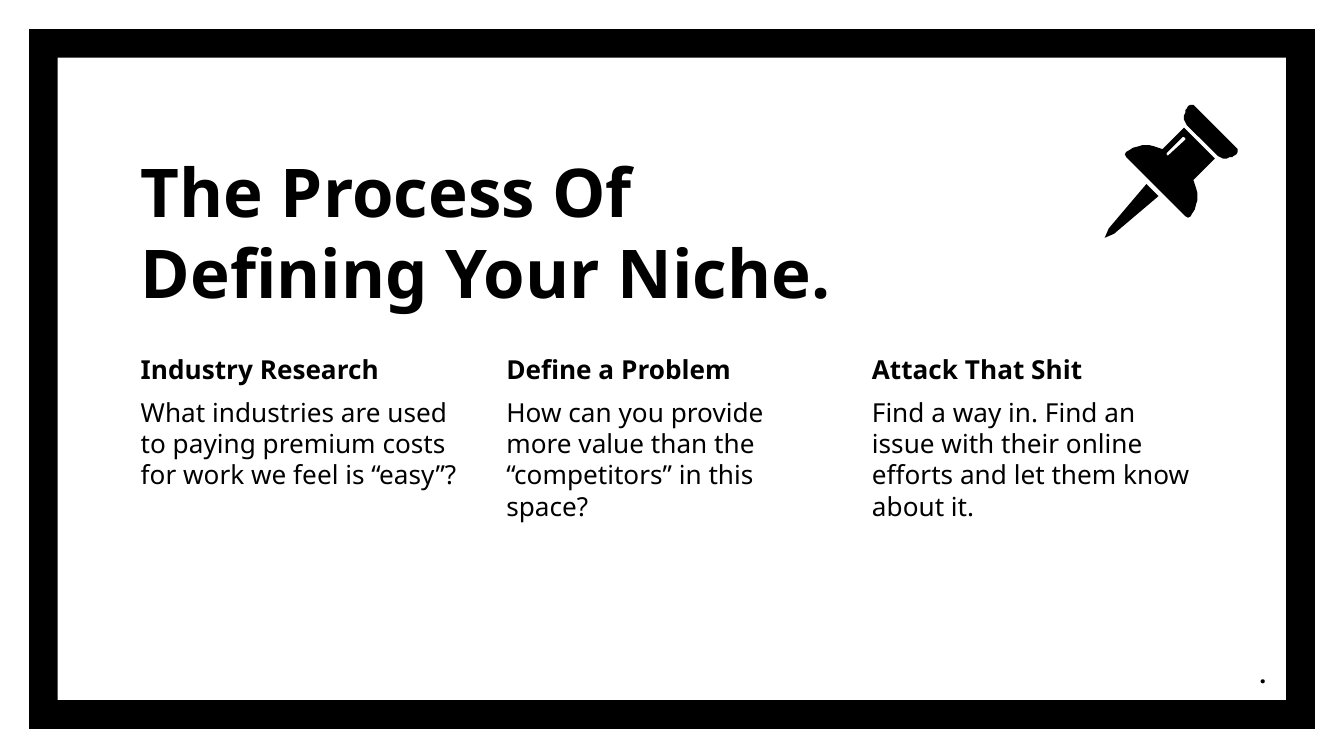
from pptx import Presentation
from pptx.dml.color import RGBColor
from pptx.enum.shapes import MSO_SHAPE as Shape
from pptx.enum.text import MSO_ANCHOR as Anchor, PP_ALIGN as Align
from pptx.util import Cm, Pt

BLACK = RGBColor(0, 0, 0)
FONT = "Noto Sans"

# Content
TITLE = "The Process Of Defining Your Niche."
COLUMNS = [
    ("Industry Research",
     "What industries are used to paying premium costs for work we feel is “easy”?"),
    ("Define a Problem",
     "How can you provide more value than the “competitors” in this space?"),
    ("Attack That Shit",
     "Find a way in. Find an issue with their online efforts and let them know about it."),
]
CORNER_MARK = "."

# Pushpin: half outlines, mirrored across the diagonal x + y = PIN_AXIS
PIN_UNIT = Cm(0.0254)
PIN_AXIS = 999
NEEDLE_HALF = [(822, 177), (825, 170), (853, 137)]
HEAD_HALF = [(883, 93), (882, 91), (881, 89), (881, 86), (882, 84), (882, 82),
             (883, 81), (884, 79), (886, 78), (888, 78), (889, 79)]
BODY_HALF = [(881, 95), (865, 111), (862, 110), (859, 109), (855, 108), (850, 108),
             (847, 109), (843, 110), (840, 112), (838, 113), (837, 115), (838, 117)]
GLINT = [(881, 102), (882, 103), (882, 104), (870, 115), (869, 116),
         (868, 115), (868, 114), (880, 102)]

# Layout in cm
LEFT, COLUMN_TOP = 2.41, 6.43
COLUMN_WIDTH, COLUMN_GAP = 6.58, 0.33

presentation = Presentation()
presentation.slide_width, presentation.slide_height = Cm(25.4), Cm(14.29)
slide = presentation.slides.add_slide(presentation.slide_layouts[6])


def paint_black(shape):
    shape.shadow.inherit = False
    shape.fill.solid()
    shape.fill.fore_color.rgb = BLACK
    shape.line.fill.background()


def add_text(texts, left, top, width, height, size, anchor=Anchor.TOP, align=Align.LEFT):
    """Add a text box whose first paragraph is bold and the rest regular."""
    box = slide.shapes.add_textbox(Cm(left), Cm(top), Cm(width), Cm(height))
    frame = box.text_frame
    frame.word_wrap = True
    frame.vertical_anchor = anchor
    frame.margin_left = frame.margin_right = Cm(0.25)
    frame.margin_top = frame.margin_bottom = Cm(0.25)
    for index, text in enumerate(texts):
        paragraph = frame.add_paragraph() if index else frame.paragraphs[0]
        paragraph.text = text
        paragraph.alignment = align
        if index:
            paragraph.space_before = Pt(6)
        font = paragraph.font
        font.name, font.size, font.bold = FONT, Pt(size), index == 0
        font.color.rgb = BLACK


def add_pin_part(half, hole=None):
    mirrored = [(PIN_AXIS - y, PIN_AXIS - x) for x, y in reversed(half)]
    outline = half + mirrored
    builder = slide.shapes.build_freeform(*outline[0], scale=PIN_UNIT)
    builder.add_line_segments(outline[1:], close=True)
    if hole:
        builder.move_to(*hole[0])
        builder.add_line_segments(hole[1:], close=True)
    paint_black(builder.convert_to_shape())


# Border
border = slide.shapes.add_shape(Shape.FRAME, Cm(0.55), Cm(0.55), Cm(24.3), Cm(13.23))
border.adjustments[0] = 0.041
paint_black(border)

# Title and columns
add_text([TITLE], LEFT, 2.36, 14.15, 3.78, size=36, anchor=Anchor.BOTTOM)
for number, column in enumerate(COLUMNS):
    left = LEFT + number * (COLUMN_WIDTH + COLUMN_GAP)
    add_text(column, left, COLUMN_TOP, COLUMN_WIDTH, 5.66, size=14)

# Pushpin
add_pin_part(NEEDLE_HALF)
add_pin_part(HEAD_HALF)
add_pin_part(BODY_HALF, hole=GLINT)

# Corner mark
add_text([CORNER_MARK], 22.66, 12.19, 1.52, 1.09, size=13,
         anchor=Anchor.MIDDLE, align=Align.RIGHT)

presentation.save("out.pptx")
